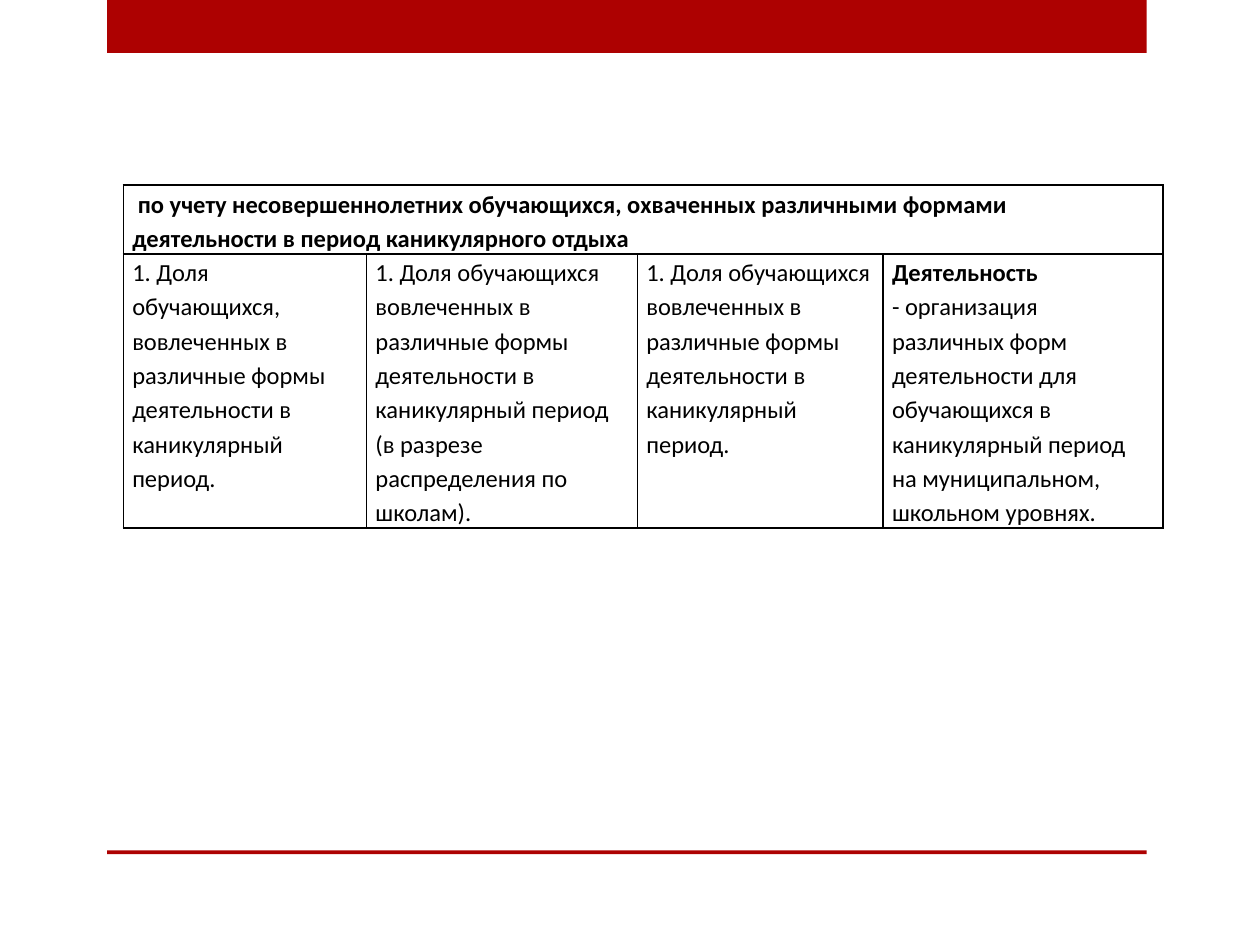
from pptx import Presentation
from pptx import util as u
from pptx.dml.color import RGBColor
from pptx.enum import shapes, text
from pptx.oxml import parse_xml
from pptx.oxml.ns import nsdecls

COLORS = {"accent": "AD0101", "ink": "000000"}
WIDTH, HEIGHT = 10, 7.5
BAND_LEFT, BAND_WIDTH = 0.085, 0.825
TABLE_LEFT, TABLE_TOP = 0.098, 0.196
COLUMN_SHARES = [0.193, 0.215, 0.195, 0.222]
ROW_SHARES = [0.072, 0.285]

HEADING = [[(" ", False), ("по учету несовершеннолетних обучающихся, охваченных различными "
                           "формами деятельности в период каникулярного отдыха", True)]]
INVOLVED = "вовлеченных в различные формы деятельности в каникулярный период"
COLUMNS = [
    [[(f"1. Доля обучающихся, {INVOLVED}.", False)]],
    [[(f"1. Доля обучающихся {INVOLVED} (в разрезе распределения по школам).", False)]],
    [[(f"1. Доля обучающихся {INVOLVED}.", False)]],
    [[("Деятельность", True)],
     [("- организация различных форм деятельности для обучающихся в каникулярный "
       "период на муниципальном,", False)],
     [("школьном уровнях.", False)]],
]


class SlideBuilder:
    font = {"name": "Calibri", "size": u.Pt(14)}
    cell_format = {"margin_left": u.Inches(0.07), "margin_right": u.Inches(0.07),
                   "margin_top": 0, "margin_bottom": 0,
                   "vertical_anchor": text.MSO_ANCHOR.TOP}
    table_format = {"first_row": False, "horz_banding": False}

    def __init__(self, deck):
        self.deck = deck
        self.slide = deck.slides.add_slide(deck.slide_layouts[6])

    def across(self, share):
        return round(self.deck.slide_width * share)

    def down(self, share):
        return round(self.deck.slide_height * share)

    def apply(self, target, values):
        for name, value in values.items():
            setattr(target, name, value)

    def band(self, top, height):
        box = self.slide.shapes.add_shape(
            shapes.MSO_SHAPE.RECTANGLE, self.across(BAND_LEFT), self.down(top),
            self.across(BAND_WIDTH), self.down(height))
        box.shadow.inherit = False
        box.fill.solid()
        box.fill.fore_color.rgb = RGBColor.from_string(COLORS["accent"])
        box.line.fill.background()

    def table(self, left, top, column_shares, row_shares):
        table = self.slide.shapes.add_table(
            len(row_shares), len(column_shares), self.across(left), self.down(top),
            self.across(sum(column_shares)), self.down(sum(row_shares))).table
        self.apply(table, self.table_format)
        for column, share in zip(table.columns, column_shares):
            column.width = self.across(share)
        for row, share in zip(table.rows, row_shares):
            row.height = self.down(share)
        for cell in table.iter_cells():
            self.apply(cell, self.cell_format)
            self.borders(cell)
            cell.fill.background()
        return table

    def borders(self, cell):
        properties = cell._tc.get_or_add_tcPr()
        for side in ("lnL", "lnR", "lnT", "lnB"):
            properties.append(parse_xml(
                f'<a:{side} {nsdecls("a")} w="{u.Pt(1)}"><a:solidFill>'
                f'<a:srgbClr val="{COLORS["ink"]}"/></a:solidFill></a:{side}>'))

    def cell_text(self, cell, paragraphs):
        frame = cell.text_frame
        for index, spans in enumerate(paragraphs):
            para = frame.add_paragraph() if index else frame.paragraphs[0]
            para.line_spacing = 1.15
            for wording, bold in spans:
                span = para.add_run()
                span.text = wording
                self.apply(span.font, {**self.font, "bold": bold})
                span.font.color.rgb = RGBColor.from_string(COLORS["ink"])


def main():
    deck = Presentation()
    deck.slide_width, deck.slide_height = u.Inches(WIDTH), u.Inches(HEIGHT)
    builder = SlideBuilder(deck)
    builder.band(0, 0.056)
    builder.band(0.9, 0.004)
    table = builder.table(TABLE_LEFT, TABLE_TOP, COLUMN_SHARES, ROW_SHARES)
    table.cell(0, 0).merge(table.cell(0, len(COLUMN_SHARES) - 1))
    builder.cell_text(table.cell(0, 0), HEADING)
    for index, paragraphs in enumerate(COLUMNS):
        builder.cell_text(table.cell(1, index), paragraphs)
    deck.save("out.pptx")


if __name__ == "__main__":
    main()
